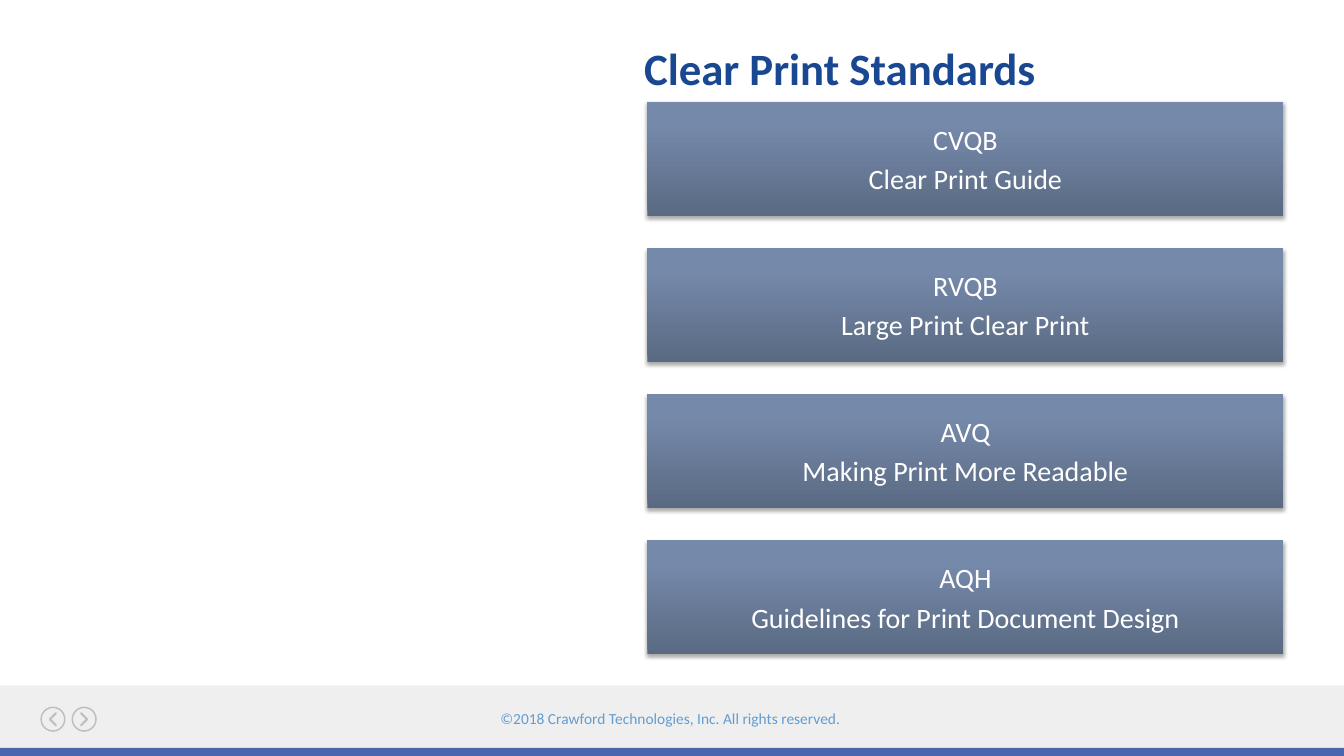
from lxml import etree
from pptx import Presentation
from pptx.dml.color import RGBColor
from pptx.enum.shapes import MSO_SHAPE
from pptx.enum.text import MSO_ANCHOR, PP_ALIGN
from pptx.oxml import parse_xml
from pptx.oxml.ns import nsdecls, qn
from pptx.util import Inches, Pt

# Content
TITLE = "Clear Print Standards"
STANDARDS = [
    ("CVQB", "Clear Print Guide"),
    ("RVQB", "Large Print Clear Print"),
    ("AVQ", "Making Print More Readable"),
    ("AQH", "Guidelines for Print Document Design"),
]
COPYRIGHT = "©2018 Crawford Technologies, Inc. All rights reserved."

# Style
FONT = "Calibri"
NAVY = RGBColor(0x19, 0x47, 0x92)
BLUE = RGBColor(0x4A, 0x66, 0xAC)
SKY = RGBColor(0x62, 0x9D, 0xD1)
GREY = RGBColor(0xD9, 0xD9, 0xD9)
ICON_GREY = RGBColor(0xBF, 0xBF, 0xBF)
WHITE = RGBColor(0xFF, 0xFF, 0xFF)
CARD_STOPS = [(0, "5A6A83"), (80, "7589AA"), (100, "748AAC")]

# Layout, in inches
SLIDE_W, SLIDE_H = 13.33, 7.5
CARD_LEFT, CARD_TOP, CARD_W, CARD_H, CARD_PITCH = 6.42, 1.01, 6.31, 1.13, 1.45
ICON_TOP, ICON_SIZE = 7.01, 0.25
ICONS = [(0.4, -1), (0.71, 1)]  # left edge, pointing direction


def add_shape(s, kind, left, top, width, height, color=None):
    sp = s.shapes.add_shape(kind, Inches(left), Inches(top), Inches(width), Inches(height))
    sp.shadow.inherit = False
    sp.line.fill.background()
    if color is not None:
        sp.fill.solid()
        sp.fill.fore_color.rgb = color
    return sp


def add_text(s, left, top, width, height, text, size, color):
    sp = s.shapes.add_textbox(Inches(left), Inches(top), Inches(width), Inches(height))
    tf = sp.text_frame
    tf.word_wrap = True
    p = tf.paragraphs[0]
    p.text = text
    style_font(p.runs[0].font, size, color)
    return p


def style_font(font, size, color):
    font.name = FONT
    font.size = Pt(size)
    font.color.rgb = color


def style_card(sp):
    """Upward gradient and soft drop shadow."""
    sp.fill.background()
    stops = "".join(
        f'<a:gs pos="{pos * 1000}"><a:srgbClr val="{color}"/></a:gs>' for pos, color in CARD_STOPS
    )
    gradient = parse_xml(
        f'<a:gradFill {nsdecls("a")} rotWithShape="1"><a:gsLst>{stops}</a:gsLst>'
        '<a:lin ang="16200000" scaled="0"/></a:gradFill>'
    )
    sp_pr = sp.element.spPr
    sp_pr.replace(sp_pr.find(qn("a:noFill")), gradient)
    shadow = parse_xml(
        f'<a:outerShdw {nsdecls("a")} blurRad="{Pt(3.1)}" dist="{Pt(1.8)}" dir="5400000" '
        'rotWithShape="0"><a:srgbClr val="000000"><a:alpha val="35000"/></a:srgbClr></a:outerShdw>'
    )
    sp_pr.find(qn("a:effectLst")).append(shadow)


def add_card(s, top, lines):
    sp = add_shape(s, MSO_SHAPE.RECTANGLE, CARD_LEFT, top, CARD_W, CARD_H)
    style_card(sp)
    tf = sp.text_frame
    tf.word_wrap = True
    tf.vertical_anchor = MSO_ANCHOR.MIDDLE
    tf.text = "\n".join(lines)
    for i, p in enumerate(tf.paragraphs):
        p.alignment = PP_ALIGN.CENTER
        if i:
            p.space_before = Pt(4)
        style_font(p.runs[0].font, 20, WHITE)


def add_nav_icon(s, left, direction):
    ring = add_shape(s, MSO_SHAPE.DONUT, left, ICON_TOP, ICON_SIZE, ICON_SIZE, ICON_GREY)
    ring.adjustments[0] = 0.06
    x, y = left + ICON_SIZE / 2, ICON_TOP + ICON_SIZE / 2
    back, tip = x - 0.03 * direction, x + 0.03 * direction
    fb = s.shapes.build_freeform(Inches(back), Inches(y - 0.06))
    fb.add_line_segments([(Inches(tip), Inches(y)), (Inches(back), Inches(y + 0.06))], close=False)
    arrow = fb.convert_to_shape()
    arrow.shadow.inherit = False
    arrow.fill.background()
    arrow.line.color.rgb = ICON_GREY
    arrow.line.width = Pt(1.5)
    ln = arrow.element.spPr.find(qn("a:ln"))
    ln.set("cap", "rnd")
    etree.SubElement(ln, qn("a:round"))


def main():
    prs = Presentation()
    prs.slide_width, prs.slide_height = Inches(SLIDE_W), Inches(SLIDE_H)
    s = prs.slides.add_slide(prs.slide_layouts[6])

    # Footer
    band = add_shape(s, MSO_SHAPE.RECTANGLE, 0, 6.8, SLIDE_W, 0.62, GREY)
    color = band.element.spPr.find(qn("a:solidFill")).find(qn("a:srgbClr"))
    etree.SubElement(color, qn("a:alpha")).set("val", "40000")
    add_shape(s, MSO_SHAPE.RECTANGLE, 0, 7.42, SLIDE_W, 0.08, BLUE)
    p = add_text(s, 3.19, 7.02, 6.92, 0.26, COPYRIGHT, 11, SKY)
    p.alignment = PP_ALIGN.CENTER
    p.line_spacing = 0.8
    for left, direction in ICONS:
        add_nav_icon(s, left, direction)

    # Title
    p = add_text(s, 6.29, 0.36, 6.46, 0.8, TITLE, 32, NAVY)
    p.runs[0].font.bold = True

    # Standards cards
    for i, lines in enumerate(STANDARDS):
        add_card(s, CARD_TOP + i * CARD_PITCH, lines)

    prs.save("out.pptx")


if __name__ == "__main__":
    main()
